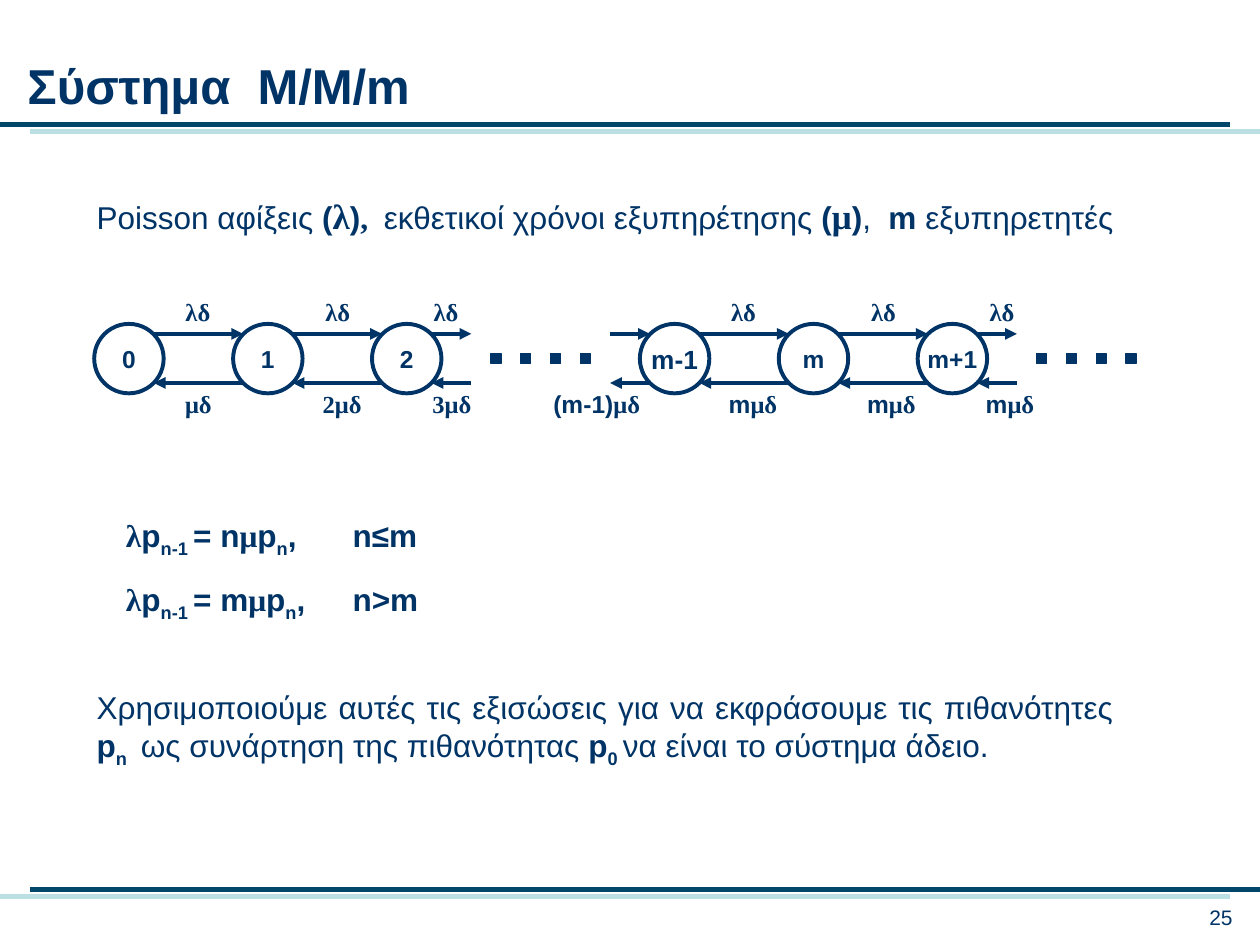
"""Build the slide on the M/M/m queueing system."""
from lxml.etree import SubElement
from pptx import Presentation
from pptx.dml.color import RGBColor
from pptx.enum.shapes import MSO_CONNECTOR, MSO_SHAPE
from pptx.enum.text import MSO_ANCHOR, MSO_AUTO_SIZE, PP_ALIGN
from pptx.oxml.ns import qn
from pptx.util import Cm, Pt

NAVY, TEAL, AQUA = "003366", "00476A", "BBE0E3"
SANS, SERIF = "Arial", "Times New Roman"


def write(paragraph, runs, align=PP_ALIGN.LEFT):
    """Add runs of (text, size, font, bold, subscript) to a paragraph."""
    paragraph.alignment = align
    for text, size, font, bold, subscript in runs:
        span = paragraph.add_run()
        span.text = text
        span.font.size = Pt(size)
        span.font.name = font
        span.font.bold = bold
        span.font.color.rgb = RGBColor.from_string(NAVY)
        if subscript:
            span._r.get_or_add_rPr().set("baseline", "-25000")


def draw_line(left, right, height, color, width, arrow=None, shadow_angle=None):
    """Draw a horizontal line with an optional arrowhead or offset shadow."""
    line = page.shapes.add_connector(
        MSO_CONNECTOR.STRAIGHT, Cm(left), Cm(height), Cm(right), Cm(height))
    line.line.color.rgb = RGBColor.from_string(color)
    line.line.width = Pt(width)
    if arrow:
        SubElement(line.line._get_or_add_ln(), qn(f"a:{arrow}"), type="triangle")
    effects = SubElement(line._element.spPr, qn("a:effectLst"))
    if shadow_angle is not None:
        shadow = SubElement(effects, qn("a:outerShdw"), dist=str(Pt(17.5)),
                            dir=str(shadow_angle * 60000), algn="ctr", rotWithShape="0")
        SubElement(shadow, qn("a:srgbClr"), val=AQUA)


deck = Presentation()
deck.slide_width, deck.slide_height = Cm(25.4), Cm(19.05)
page = deck.slides.add_slide(deck.slide_layouts[5])

title = page.shapes.title
title.left, title.top, title.width, title.height = Cm(0.3), Cm(1), Cm(23.6), Cm(1.45)
title.text_frame.auto_size = MSO_AUTO_SIZE.NONE
title.text_frame.vertical_anchor = MSO_ANCHOR.TOP
write(title.text_frame.paragraphs[0], [("Σύστημα  M/M/m", 28, SANS, True, False)])

draw_line(0, 24.8, 2.51, TEAL, 3, shadow_angle=13)
draw_line(0.6, 25.4, 17.93, TEAL, 3, shadow_angle=167)

arrivals = [
    ("Poisson αφίξεις ", 18, SANS, False, False),
    ("(", 18, SANS, True, False),
    ("λ", 20, SERIF, True, False),
    (")", 18, SANS, True, False),
    (",  ", 18, SERIF, True, False),
    ("εκθετικοί χρόνοι εξυπηρέτησης ", 18, SANS, False, False),
    ("(", 18, SANS, True, False),
    ("μ", 20, SERIF, True, False),
    (")", 18, SANS, True, False),
    (",  ", 18, SANS, False, False),
    ("m ", 18, SANS, True, False),
    ("εξυπηρετητές", 18, SANS, False, False),
]
conclusion = [
    ("Χρησιμοποιούμε αυτές τις εξισώσεις για να εκφράσουμε τις πιθανότητες ",
     18, SANS, False, False),
    ("p", 18, SANS, True, False),
    ("n ", 18, SANS, True, True),
    (" ως συνάρτηση της πιθανότητας ", 18, SANS, False, False),
    ("p", 18, SANS, True, False),
    ("0 ", 18, SANS, True, True),
    ("να είναι το σύστημα άδειο.", 18, SANS, False, False),
]
equations = [
    [
        ("λ", 18, SERIF, True, False),
        ("p", 18, SANS, True, False),
        ("n-1 ", 18, SANS, True, True),
        (f"= {servers}", 18, SANS, True, False),
        ("μ", 18, SERIF, True, False),
        ("p", 18, SANS, True, False),
        ("n", 18, SANS, True, True),
        (f",\t{condition}", 18, SANS, True, False),
    ]
    for servers, condition in [("n", "n≤m"), ("m", "n>m")]
]
page_number = [("25", 12, SANS, False, False)]

for left, top, width, height, align, paragraphs in [
    (1.7, 3.8, 21, 1.12, PP_ALIGN.LEFT, [arrivals]),
    (22.3, 18.1, 2.8, 0.76, PP_ALIGN.RIGHT, [page_number]),
    (1.7, 13.75, 21, 1.8, PP_ALIGN.JUSTIFY, [conclusion]),
    (2.29, 10.28, 21, 3.3, PP_ALIGN.LEFT, equations),
]:
    box = page.shapes.add_textbox(Cm(left), Cm(top), Cm(width), Cm(height))
    box.text_frame.word_wrap = True
    for index, runs in enumerate(paragraphs):
        paragraph = box.text_frame.paragraphs[0]
        if index:
            paragraph = box.text_frame.add_paragraph()
            paragraph.space_before = Pt(12)
        write(paragraph, runs, align)
        if paragraphs is equations:
            tabs = SubElement(paragraph._p.get_or_add_pPr(), qn("a:tabLst"))
            SubElement(tabs, qn("a:tab"), pos=str(Cm(4.57)), algn="l")

pitch, diameter = 2.8, 1.4
for start, states in [(1.9, ["0", "1", "2"]), (12.9, ["m-1", "m", "m+1"])]:
    for index, state in enumerate(states):
        left = start + index * pitch
        circle = page.shapes.add_shape(
            MSO_SHAPE.OVAL, Cm(left), Cm(6.53), Cm(diameter), Cm(diameter))
        circle.shadow.inherit = False
        circle.fill.background()
        circle.line.color.rgb = RGBColor.from_string(NAVY)
        circle.line.width = Pt(2.25)
        circle.text_frame.word_wrap = False
        circle.text_frame.vertical_anchor = MSO_ANCHOR.MIDDLE
        size = 15 if state == "m-1" else 14
        write(circle.text_frame.paragraphs[0], [(state, size, SANS, True, False)],
              PP_ALIGN.CENTER)

arrow_spans = [(3.1, 1.8), (5.9, 1.8), (8.7, 0.8), (12.3, 0.8),
               (14.1, 1.8), (16.9, 1.8), (19.7, 0.8)]
for left, length in arrow_spans:
    for height, arrow in [(6.73, "tailEnd"), (7.72, "headEnd")]:
        draw_line(left, left + length, height, NAVY, 2.25, arrow)

for start in (9.9, 20.9):
    for index in range(4):
        dot = page.shapes.add_shape(
            MSO_SHAPE.RECTANGLE, Cm(start + index * 0.6), Cm(7.13), Cm(0.2), Cm(0.2))
        dot.shadow.inherit = False
        dot.fill.solid()
        dot.fill.fore_color.rgb = RGBColor.from_string(NAVY)
        dot.line.color.rgb = RGBColor.from_string(NAVY)
        dot.line.width = Pt(0.75)

rates = [(left, 5.87, 1.02, "", "λδ") for left in (3.48, 6.3, 8.48, 14.48, 17.3, 19.69)]
rates += [(3.48, 7.72, 1.04, "", "μδ"), (6.25, 7.72, 1.3, "", "2μδ"),
          (8.46, 7.72, 1.3, "", "3μδ"), (10.9, 7.72, 2.26, "(m-1)", "μδ")]
rates += [(left, 7.72, 1.5, "m", "μδ") for left in (14.43, 17.22, 19.61)]
for left, top, width, prefix, symbol in rates:
    box = page.shapes.add_textbox(Cm(left), Cm(top), Cm(width), Cm(0.84))
    box.text_frame.word_wrap = False
    runs = [(prefix, 14, SANS, True, False)] if prefix else []
    runs.append((symbol, 14, SERIF, True, False))
    write(box.text_frame.paragraphs[0], runs, PP_ALIGN.CENTER)

deck.save("out.pptx")
